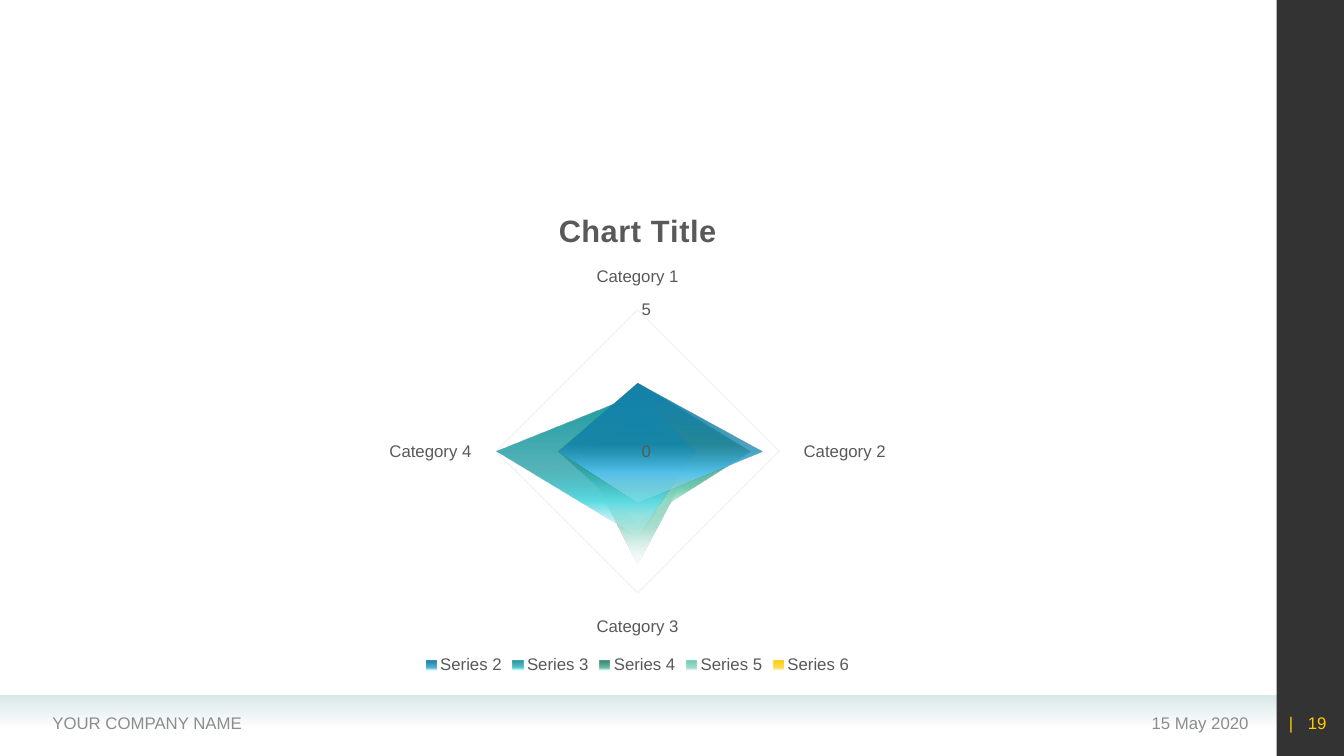
import lxml.etree
import pptx
import pptx.chart.data
import pptx.dml.color
import pptx.enum.chart
import pptx.enum.shapes
import pptx.enum.text
import pptx.oxml.ns
import pptx.util

Cm = pptx.util.Cm
Pt = pptx.util.Pt
qn = pptx.oxml.ns.qn
ALIGN = pptx.enum.text.PP_ALIGN

SLIDE_W, SLIDE_H = 33.87, 19.05
SIDEBAR_W = 1.7
GREY, GRID, MUTED, ACCENT = "595959", "F2F2F2", "8C8C8C", "FFCC00"

CATEGORIES = ["Category 1", "Category 2", "Category 3", "Category 4"]
# name, values, strong / middle / pale colour of the gradient
SERIES = [
    ("Series 2", (2.4, 4.4, 1.8, 2.8), ("1482AB", "54C2EB", "C6EBF8")),
    ("Series 3", (2, 2, 3, 5), ("1D9AA1", "5CDBE2", "C9F3F5")),
    ("Series 4", (2.4, 4, 2.5, 2.8), ("318B71", "70CDB2", "CFEEE5")),
    ("Series 5", (1.2, 2.1, 4, 2), ("70CCB1", "A9E0D0", "E2F5EF")),
    ("Series 6", (2.4, 4, 1.8, 2.1), ("FFCC00", "FFE066", "FFF5CC")),
]


def rgb(hex_colour):
    return pptx.dml.color.RGBColor.from_string(hex_colour)


def apply(target, formats):
    for name, value in formats.items():
        setattr(target, name, value)


def style_font(font, size, colour, bold=False):
    apply(font, {"name": "Arial", "size": Pt(size), "bold": bold})
    font.color.rgb = rgb(colour)


def add_colour(parent, hex_colour, opacity):
    colour = lxml.etree.SubElement(parent, qn("a:srgbClr"), val=str(rgb(hex_colour)))
    if opacity < 100:
        lxml.etree.SubElement(colour, qn("a:alpha"), val=str(opacity * 1000))


def paint(fill, properties, stops):
    """Fill with (position, colour, opacity) stops from top to bottom; one stop is solid."""
    fill.background()
    placeholder = properties.find(qn("a:noFill"))
    if len(stops) == 1:
        paint_xml = lxml.etree.Element(qn("a:solidFill"))
        add_colour(paint_xml, *stops[0][1:])
    else:
        paint_xml = lxml.etree.Element(qn("a:gradFill"), rotWithShape="1")
        stop_list = lxml.etree.SubElement(paint_xml, qn("a:gsLst"))
        for position, colour, opacity in stops:
            stop = lxml.etree.SubElement(stop_list, qn("a:gs"), pos=str(position * 1000))
            add_colour(stop, colour, opacity)
        lxml.etree.SubElement(paint_xml, qn("a:lin"), ang="5400000", scaled="0")
    properties.replace(placeholder, paint_xml)


def add_band(slide, box, stops):
    band = slide.shapes.add_shape(
        pptx.enum.shapes.MSO_SHAPE.RECTANGLE, *map(Cm, box))
    band.shadow.inherit = False
    band.line.fill.background()
    paint(band.fill, band._element.spPr, stops)


def add_label(slide, box, text, colour, align):
    label = slide.shapes.add_textbox(*map(Cm, box))
    apply(label.text_frame, {
        "word_wrap": True,
        "vertical_anchor": pptx.enum.text.MSO_ANCHOR.MIDDLE,
    })
    paragraph = label.text_frame.paragraphs[0]
    paragraph.alignment = align
    run = paragraph.add_run()
    run.text = text
    style_font(run.font, 12, colour)
    return label


def add_footer(slide, box):
    left, top, width, height = box
    add_band(slide, (left, top, width, 0.79),
             [(0, "D9E9E8", 100), (100, "D9E9E8", 0)])
    label_top, label_h, date_w = top + 0.18, 1.02, 8.61
    add_label(slide, (left + width - 0.45 - date_w, label_top, date_w, label_h),
              "15 May 2020", MUTED, ALIGN.RIGHT)
    add_label(slide, (left + 1.07, label_top, 12.45, label_h),
              "YOUR COMPANY NAME", MUTED, ALIGN.LEFT)


def add_sidebar(slide, box, page):
    left, top, width, height = box
    add_band(slide, box, [(0, "000000", 80)])
    number = add_label(slide, (left - 0.17, top + 17.7, width, 1.02),
                       f"|\t{page}", ACCENT, ALIGN.LEFT)
    apply(number.text_frame, {"margin_left": Cm(0.48), "margin_right": Cm(0.1)})
    properties = number.text_frame.paragraphs[0]._p.get_or_add_pPr()
    tabs = lxml.etree.SubElement(properties, qn("a:tabLst"))
    lxml.etree.SubElement(tabs, qn("a:tab"), pos=str(Cm(0.48)), algn="l")


def style_axis(axis):
    tick_mark = pptx.enum.chart.XL_TICK_MARK.NONE
    apply(axis, {"major_tick_mark": tick_mark, "minor_tick_mark": tick_mark,
                 "has_major_gridlines": True})
    axis.format.line.fill.background()
    style_font(axis.tick_labels.font, 12, GREY)
    grid = axis.major_gridlines.format.line
    grid.width = Pt(0.75)
    grid.color.rgb = rgb(GRID)


def add_radar(slide, box):
    data = pptx.chart.data.CategoryChartData()
    data.categories = CATEGORIES
    for name, values, _ in SERIES:
        data.add_series(name, values)
    chart = slide.shapes.add_chart(
        pptx.enum.chart.XL_CHART_TYPE.RADAR_FILLED, *map(Cm, box), data).chart
    style_font(chart.font, 10, "000000")

    chart.has_title = True
    title = chart.chart_title.text_frame.paragraphs[0].add_run()
    title.text = "Chart Title"
    style_font(title.font, 22, GREY, bold=True)
    title.font._element.set("spc", "50")

    chart.has_legend = True
    apply(chart.legend, {
        "position": pptx.enum.chart.XL_LEGEND_POSITION.BOTTOM,
        "include_in_layout": False,
    })
    style_font(chart.legend.font, 12, GREY)

    for axis in (chart.category_axis, chart.value_axis):
        style_axis(axis)
    apply(chart.value_axis, {"minimum_scale": 0, "maximum_scale": 5, "major_unit": 5})
    apply(chart.value_axis.tick_labels,
          {"number_format": "General", "number_format_is_linked": False})

    plot = chart.plots[0]
    plot.vary_by_categories = False
    for series, (_, _, (strong, middle, pale)) in zip(plot.series, SERIES):
        paint(series.format.fill, series._element.get_or_add_spPr(),
              [(0, strong, 100), (51, strong, 75), (75, middle, 100), (100, pale, 15)])
        series.format.line.fill.background()


def main():
    deck = pptx.Presentation()
    apply(deck, {"slide_width": Cm(SLIDE_W), "slide_height": Cm(SLIDE_H)})
    slide = deck.slides.add_slide(deck.slide_layouts[6])
    content_w = SLIDE_W - SIDEBAR_W
    add_footer(slide, (0, 17.52, content_w, SLIDE_H - 17.52))
    add_sidebar(slide, (content_w, 0, SIDEBAR_W, SLIDE_H), 19)
    add_radar(slide, (4.78, 4.8, 22.58, 12.29))
    deck.save("out.pptx")


if __name__ == "__main__":
    main()
